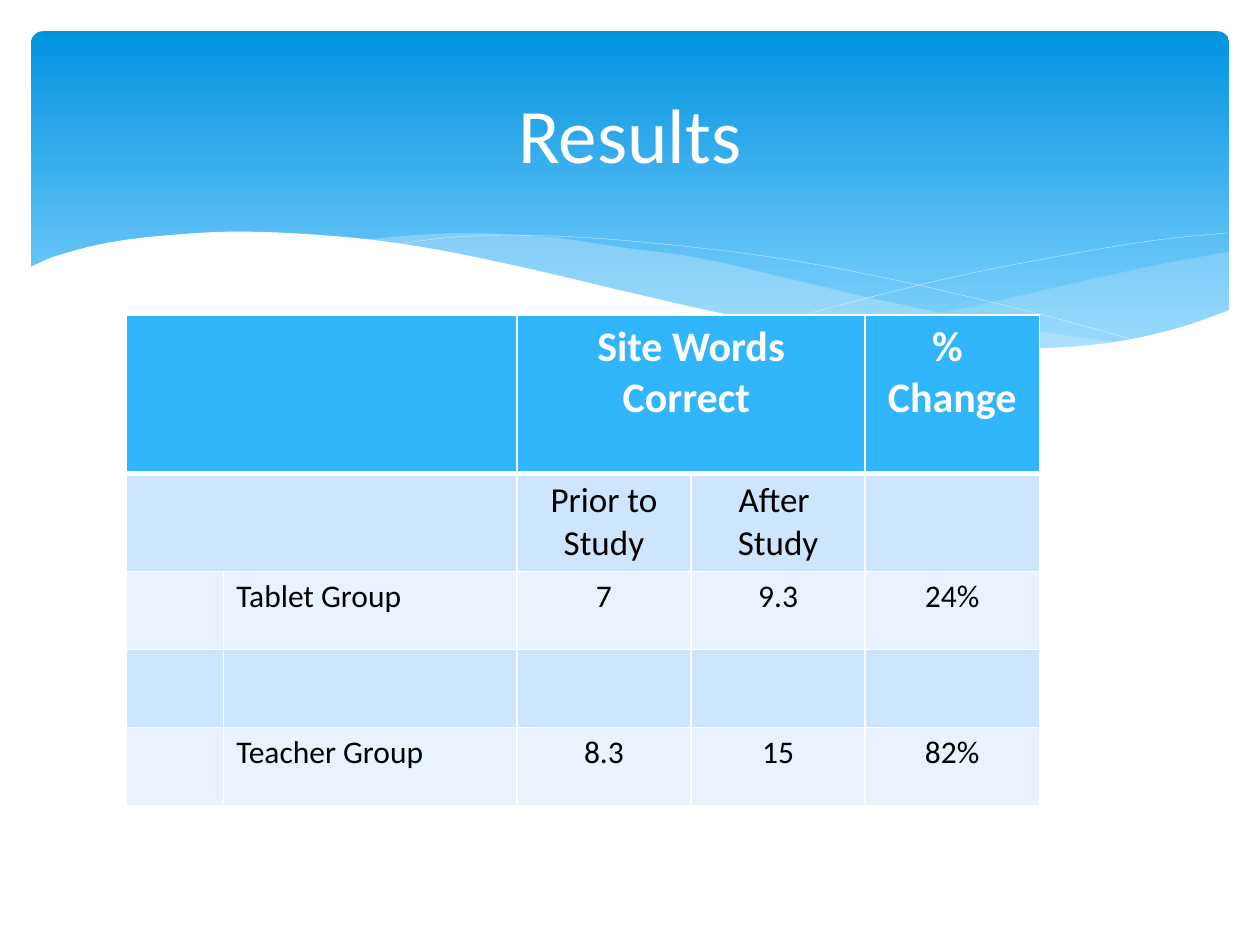
from lxml import etree
from pptx import Presentation
from pptx.dml.color import RGBColor
from pptx.enum.shapes import MSO_SHAPE
from pptx.enum.text import MSO_ANCHOR, PP_ALIGN
from pptx.oxml.ns import qn
from pptx.util import Cm, Pt

ROUNDED = MSO_SHAPE.ROUNDED_RECTANGLE
CENTER, LEFT = PP_ALIGN.CENTER, PP_ALIGN.LEFT
MIDDLE = MSO_ANCHOR.MIDDLE
INCH = 2.54
WHITE, BLACK, PALE = "FFFFFF", "000000", "C6E7FC"
HEADER, BAND_DARK, BAND_LIGHT = "31B6FD", "CEE5FE", "E8F3FF"

RIGHT_WAVE = [
    [(9.51, 1.75), (8.96, 1.85), (8.36, 1.98), (7.54, 2.17), (6.81, 2.32), (6.36, 2.4)],
    [(6.36, 2.4), (6.94, 2.47), (7.56, 2.52), (8.1, 2.52), (8.56, 2.49),
     (8.96, 2.4), (9.24, 2.32), (9.51, 2.22)],
]
MIDDLE_WAVE = [
    [(8.68, 2.48), (7.82, 2.35), (6.81, 2.15), (6.04, 1.97), (5.3, 1.8),
     (4.64, 1.71), (4.17, 1.64), (3.55, 1.6), (3.03, 1.62), (2.61, 1.66)],
    [(2.61, 1.66), (3.17, 1.74), (3.79, 1.86), (4.66, 2.07), (5.41, 2.23),
     (6.09, 2.36), (6.7, 2.45), (7.36, 2.52), (8.03, 2.53), (8.68, 2.48)],
]
FALLING_LINE = [
    [(2.84, 1.7), (3.28, 1.64), (3.76, 1.62), (4.44, 1.64), (5.31, 1.72),
     (6.11, 1.83), (7.02, 2.01), (8.06, 2.26), (8.82, 2.47)],
]
RISING_LINE = [
    [(5.88, 2.32), (6.7, 2.1), (7.51, 1.91), (8.41, 1.74), (8.99, 1.65), (9.5, 1.6)],
]
WHITE_WAVE = [
    [(9.52, 2.21), (9.05, 2.37), (8.5, 2.48), (7.84, 2.52), (7.19, 2.49),
     (6.43, 2.4), (5.54, 2.25), (4.78, 2.08), (3.93, 1.88), (3.15, 1.72),
     (2.46, 1.63), (1.68, 1.59), (1.07, 1.62), (0.6, 1.68), (0.21, 1.78),
     (0.04, 1.85), (-0.02, 1.88)],
    [(-0.02, 3.04), (9.52, 3.04)],
]

ROWS = [
    ["", "", "Site Words Correct ", "", "% \nChange"],
    ["", "", "Prior to Study", "After \nStudy", ""],
    ["", "Tablet Group", "7", "9.3", "24%"],
    ["", "", "", "", ""],
    ["", "Teacher Group", "8.3", "15", "82%"],
]
MERGES = [((0, 0), (0, 1)), ((0, 2), (0, 3)), ((1, 0), (1, 1))]
COL_WIDTHS = [1.97, 5.91, 3.51, 3.51, 3.51]
ROW_HEIGHTS = [3.19, 1.98, 1.57, 1.57, 1.57]
ROW_SIZES = [24, 20, 18, 18, 18]


def rgb(value):
    return RGBColor.from_string(value)


def paint(fill, color, alpha=100):
    fill.solid()
    fill.fore_color.rgb = rgb(color)
    if alpha < 100:
        clr = fill._xPr.find(".//" + qn("a:srgbClr"))
        etree.SubElement(clr, qn("a:alpha"), val=str(alpha * 1000))


def format_text(tf, align, size, color, bold=False):
    font = {"name": "Calibri", "size": Pt(size), "bold": bold}
    for p in tf.paragraphs:
        p.alignment = align
        for r in p.runs:
            for key, value in font.items():
                setattr(r.font, key, value)
            r.font.color.rgb = rgb(color)


def smooth_curve(points, steps=6):
    padded = [points[0], *points, points[-1]]
    curve = [points[0]]
    for a, b, c, d in zip(padded, padded[1:], padded[2:], padded[3:]):
        for i in range(1, steps + 1):
            t = i / steps
            curve.append(tuple(
                0.5 * (2 * q + (r - p) * t + (2 * p - 5 * q + 4 * r - s) * t ** 2
                       + (3 * q - p - 3 * r + s) * t ** 3)
                for p, q, r, s in zip(a, b, c, d)))
    return curve


def add_curve(s, left, top, curves, closed):
    points = [(Cm(left + x * INCH), Cm(top + y * INCH))
              for curve in curves for x, y in smooth_curve(curve)]
    builder = s.shapes.build_freeform(*points[0])
    builder.add_line_segments(points[1:], close=closed)
    sp = builder.convert_to_shape()
    sp.shadow.inherit = False
    return sp


def add_banner(s, left, top, width, height):
    sp = s.shapes.add_shape(ROUNDED, Cm(left), Cm(top), Cm(width), Cm(height))
    sp.adjustments[0] = 0.034
    sp.shadow.inherit = False
    sp.line.fill.background()
    sp.fill.gradient()
    sp.fill.gradient_angle = 270
    for stop, color, position in zip(sp.fill.gradient_stops, ("0293E0", "83D3FE"), (0, 0.9)):
        stop.color.rgb = rgb(color)
        stop.position = position

    def add_wave(curves, color, alpha=100):
        wave = add_curve(s, left, top, curves, True)
        paint(wave.fill, color, alpha)
        wave.line.fill.background()

    add_wave(RIGHT_WAVE, PALE, 29)
    add_wave(MIDDLE_WAVE, PALE, 40)
    for curves in (FALLING_LINE, RISING_LINE):
        line = add_curve(s, left, top, curves, False)
        line.fill.background()
        line.line.color.rgb = rgb(WHITE)
        line.line.width = Pt(0.1)
    add_wave(WHITE_WAVE, WHITE)


def add_title(s, left, top, width, height):
    sp = s.shapes.title
    box = {"left": left, "top": top, "width": width, "height": height}
    for key, value in box.items():
        setattr(sp, key, Cm(value))
    tf = sp.text_frame
    tf.text = "Results"
    tf.vertical_anchor = MIDDLE
    format_text(tf, CENTER, 44, WHITE)
    s.shapes._spTree.append(sp._element)


def set_borders(cell, widths):
    tc_pr = cell._tc.get_or_add_tcPr()
    for side, width in widths.items():
        ln = etree.SubElement(tc_pr, qn("a:ln" + side), w=str(Pt(width)))
        fill = etree.SubElement(ln, qn("a:solidFill"))
        etree.SubElement(fill, qn("a:srgbClr"), val=WHITE)


def add_results(s, left, top):
    frame = s.shapes.add_table(len(ROWS), len(COL_WIDTHS), Cm(left), Cm(top),
                               Cm(sum(COL_WIDTHS)), Cm(sum(ROW_HEIGHTS)))
    table = frame.table
    table.first_row = table.horz_banding = False
    for column, width in zip(table.columns, COL_WIDTHS):
        column.width = Cm(width)
    for row, height in zip(table.rows, ROW_HEIGHTS):
        row.height = Cm(height)
    for start, end in MERGES:
        table.cell(*start).merge(table.cell(*end))
    for i, texts in enumerate(ROWS):
        is_header = i == 0
        color = HEADER if is_header else (BAND_LIGHT, BAND_DARK)[i % 2]
        for j, text in enumerate(texts):
            cell = table.cell(i, j)
            set_borders(cell, {"L": 1, "R": 1, "T": 3 if i == 1 else 1,
                               "B": 3 if is_header else 1})
            paint(cell.fill, color)
            if text:
                cell.text = text
                format_text(cell.text_frame, LEFT if j == 1 else CENTER, ROW_SIZES[i],
                            WHITE if is_header else BLACK, is_header)


def main():
    prs = Presentation()
    prs.slide_width, prs.slide_height = Cm(25.4), Cm(19.05)
    s = prs.slides.add_slide(prs.slide_layouts[5])
    add_banner(s, 0.63, 0.63, 24.15, 6.86)
    add_title(s, 1.27, 0.94, 22.86, 3.48)
    add_results(s, 2.54, 6.35)
    prs.save("out.pptx")


if __name__ == "__main__":
    main()
